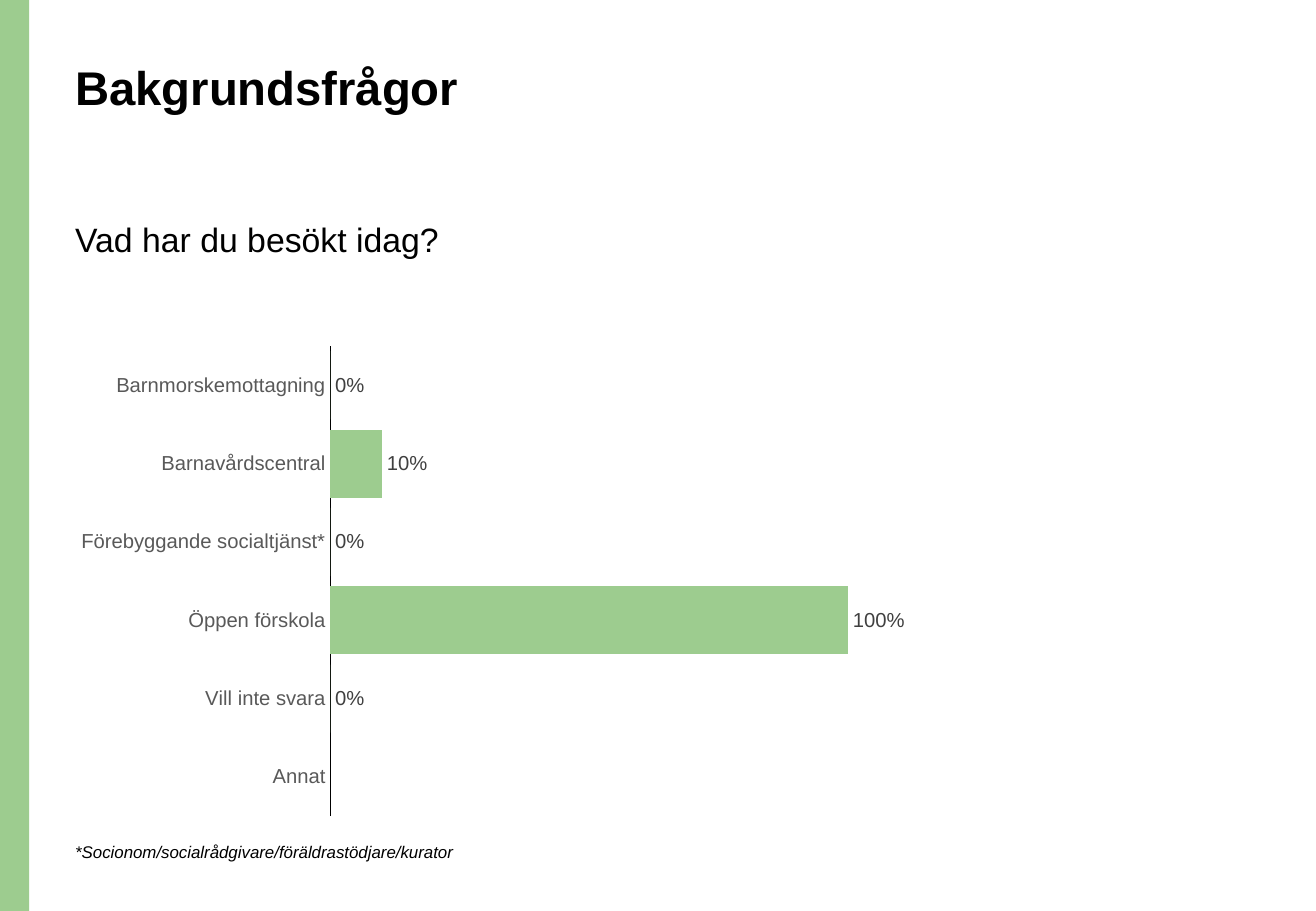
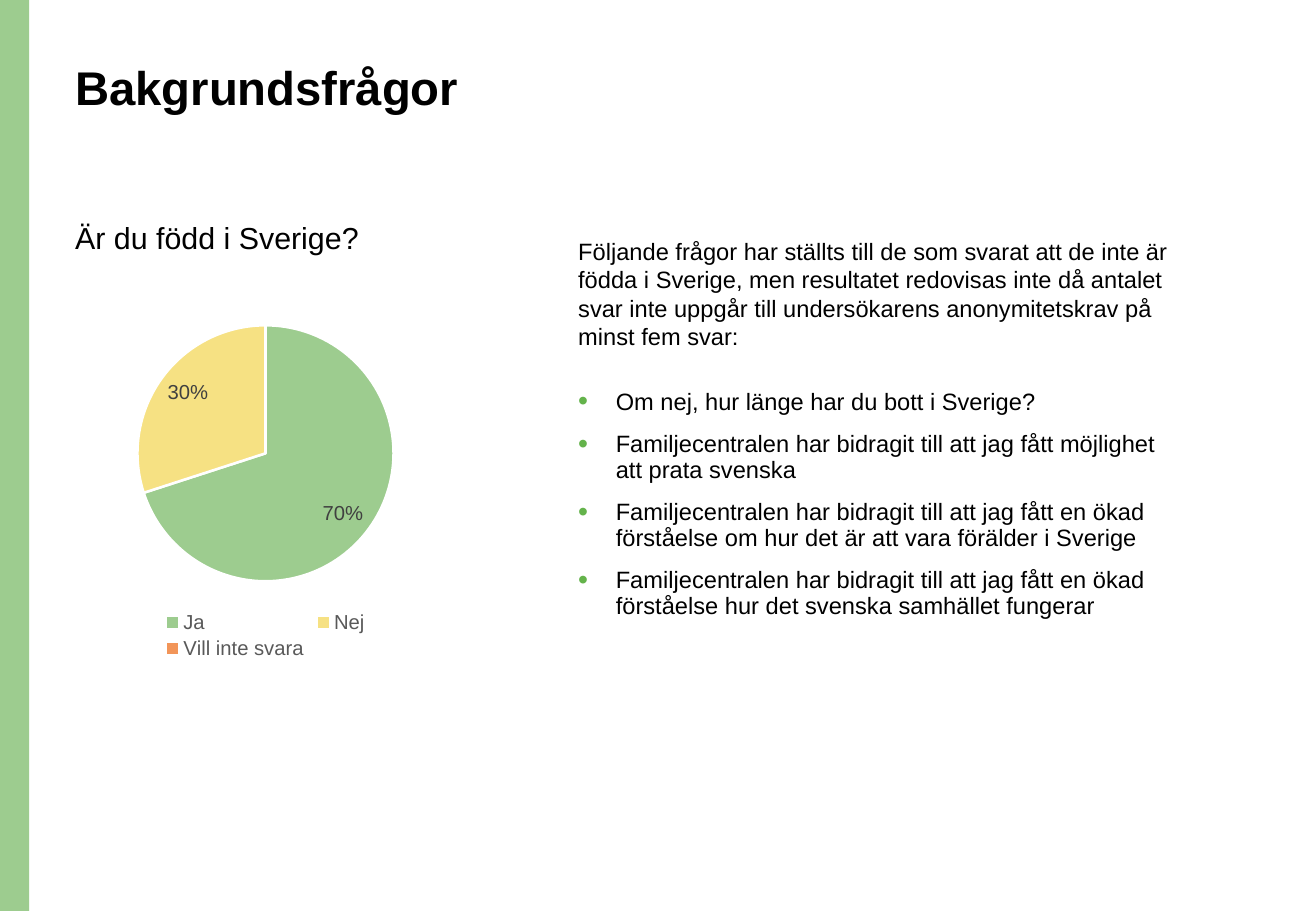
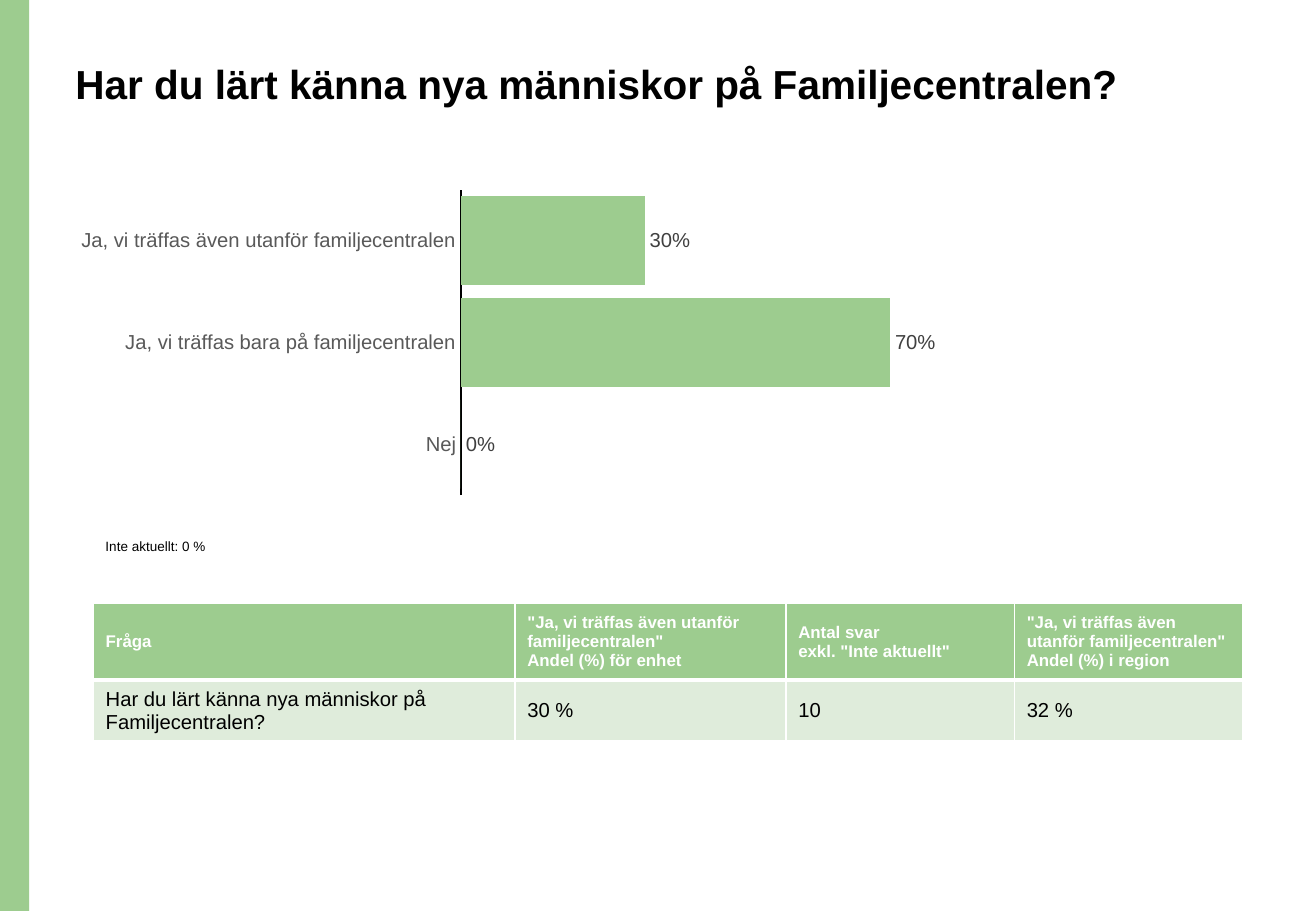
from lxml.etree import SubElement
from pptx import Presentation
from pptx.chart.data import CategoryChartData
from pptx.dml.color import RGBColor
from pptx.enum.chart import XL_CHART_TYPE, XL_LABEL_POSITION, XL_LEGEND_POSITION, XL_TICK_MARK
from pptx.enum.shapes import MSO_SHAPE
from pptx.enum.text import MSO_ANCHOR, PP_ALIGN
from pptx.oxml.ns import qn
from pptx.util import Inches, Pt

WIDTH, HEIGHT = 10.83, 7.5
LEFT = 0.52
FONT = "Arial"
BLACK, WHITE = "000000", "FFFFFF"
GREEN, PALE_GREEN, BULLET_GREEN = "9DCC8F", "DFECDB", "64B34B"
YELLOW, ORANGE = "F6E183", "F29559"
AXIS_GREY, LABEL_GREY = "595959", "404040"

VISITS = [
    ("Barnmorskemottagning", 0),
    ("Barnavårdscentral", 0.1),
    ("Förebyggande socialtjänst*", 0),
    ("Öppen förskola", 1),
    ("Vill inte svara", 0),
    ("Annat", None),
]
BORN_IN_SWEDEN = [("Ja", 0.7), ("Nej", 0.3), ("Vill inte svara", 0)]
NEW_PEOPLE = [
    ("Ja, vi träffas även utanför familjecentralen", 0.3),
    ("Ja, vi träffas bara på familjecentralen", 0.7),
    ("Nej", 0),
]
INTRODUCTION = (
    "Följande frågor har ställts till de som svarat att de inte är födda i Sverige, "
    "men resultatet redovisas inte då antalet svar inte uppgår till undersökarens "
    "anonymitetskrav på minst fem svar:"
)
FOLLOW_UPS = [
    "Om nej, hur länge har du bott i Sverige?",
    "Familjecentralen har bidragit till att jag fått möjlighet att prata svenska",
    "Familjecentralen har bidragit till att jag fått en ökad förståelse om hur det är att vara förälder i Sverige",
    "Familjecentralen har bidragit till att jag fått en ökad förståelse hur det svenska samhället fungerar",
]
TABLE_ROWS = [
    [
        "Fråga",
        '"Ja, vi träffas även utanför familjecentralen"\nAndel (%) för enhet',
        'Antal svar\nexkl. "Inte aktuellt"',
        '"Ja, vi träffas även utanför familjecentralen"\nAndel (%) i region',
    ],
    ["Har du lärt känna nya människor på Familjecentralen?", "30 %", "10", "32 %"],
]
COLUMN_WIDTHS = [3.47, 2.23, 1.88, 1.88]
ROW_HEIGHTS = [0.63, 0.23]


def color(value):
    return RGBColor.from_string(value)


def box(left, top, width, height):
    return [Inches(length) for length in (left, top, width, height)]


def style_font(font, size, value=BLACK, bold=False, italic=False):
    font.name = FONT
    font.size = Pt(size)
    font.bold = bold
    font.italic = italic
    font.color.rgb = color(value)


def add_band(layout, slide):
    band = slide.shapes.add_shape(MSO_SHAPE.RECTANGLE, *box(0, 0, 0.24, HEIGHT))
    band.shadow.inherit = False
    band.fill.solid()
    band.fill.fore_color.rgb = color(GREEN)
    band.line.fill.background()
    layout.shapes.element.insert(2, band.element) if hasattr(layout.shapes, "element") else \
        layout.element.cSld.spTree.insert(2, band.element)


def add_titled_slide(presentation, text, size):
    slide = presentation.slides.add_slide(presentation.slide_layouts[5])
    title = slide.shapes.title
    title.left, title.top, title.width, title.height = box(LEFT, 0.48, 9.34, 1.02)
    frame = title.text_frame
    frame.text = text
    frame.word_wrap = True
    frame.vertical_anchor = MSO_ANCHOR.TOP
    paragraph = frame.paragraphs[0]
    paragraph.alignment = PP_ALIGN.LEFT
    paragraph.line_spacing = 0.9
    style_font(paragraph.runs[0].font, size, bold=True)
    return slide


def add_text(slide, place, lines, size, spacing=1.0, italic=False, bulleted=False):
    frame = slide.shapes.add_textbox(*box(*place)).text_frame
    frame.word_wrap = True
    frame.text = "\n".join(lines)
    for index, paragraph in enumerate(frame.paragraphs):
        paragraph.line_spacing = spacing
        if index:
            paragraph.space_before = Pt(10)
        if bulleted:
            add_bullet(paragraph)
        style_font(paragraph.runs[0].font, size, italic=italic)


def add_bullet(paragraph):
    properties = paragraph._p.get_or_add_pPr()
    indent = Inches(0.31)
    properties.set("marL", str(indent))
    properties.set("indent", str(-indent))
    bullet_color = SubElement(properties, qn("a:buClr"))
    SubElement(bullet_color, qn("a:srgbClr"), val=BULLET_GREEN)
    SubElement(properties, qn("a:buSzPct"), val="120000")
    SubElement(properties, qn("a:buFont"), typeface=FONT)
    SubElement(properties, qn("a:buChar"), char="•")


def add_chart(slide, kind, place, answers, label_position, number_format):
    data = CategoryChartData()
    data.categories = [name for name, share in answers]
    data.add_series("Series 1", [share for name, share in answers])
    chart = slide.shapes.add_chart(kind, *box(*place), data).chart
    style_font(chart.font, 10)
    chart.has_title = False
    chart.has_legend = False
    plot = chart.plots[0]
    plot.vary_by_categories = False
    plot.has_data_labels = True
    labels = plot.data_labels
    labels.show_value = True
    labels.show_percentage = False
    labels.position = label_position
    labels.number_format = number_format
    labels.number_format_is_linked = False
    style_font(labels.font, 12, LABEL_GREY)
    return chart


def add_bar_chart(slide, place, answers):
    chart = add_chart(slide, XL_CHART_TYPE.BAR_CLUSTERED, place, answers,
                      XL_LABEL_POSITION.OUTSIDE_END, "0%")
    plot = chart.plots[0]
    plot.gap_width = 15
    fill = plot.series[0].format.fill
    fill.solid()
    fill.fore_color.rgb = color(GREEN)
    axis = chart.category_axis
    axis.reverse_order = True
    axis.major_tick_mark = XL_TICK_MARK.NONE
    axis.format.line.color.rgb = color(BLACK)
    axis.format.line.width = Pt(0.75)
    style_font(axis.tick_labels.font, 12, AXIS_GREY)
    chart.value_axis.has_major_gridlines = False
    chart.value_axis.visible = False


def add_pie_chart(slide, place, answers, slice_colors):
    chart = add_chart(slide, XL_CHART_TYPE.PIE, place, answers,
                      XL_LABEL_POSITION.INSIDE_END, '[<0.01]"";[>0.01]0%')
    chart.plots[0].vary_by_categories = True
    for index, value in enumerate(slice_colors):
        slice_format = chart.plots[0].series[0].points[index].format
        slice_format.fill.solid()
        slice_format.fill.fore_color.rgb = color(value)
        slice_format.line.color.rgb = color(WHITE)
        slice_format.line.width = Pt(1.5)
    chart.has_legend = True
    chart.legend.position = XL_LEGEND_POSITION.BOTTOM
    chart.legend.include_in_layout = False
    style_font(chart.legend.font, 12, AXIS_GREY)


def add_borders(cell, bottom):
    properties = cell._tc.get_or_add_tcPr()
    for side, width in (("L", 1), ("R", 1), ("T", 1), ("B", bottom)):
        line = SubElement(properties, qn(f"a:ln{side}"), w=str(Pt(width)))
        fill = SubElement(line, qn("a:solidFill"))
        SubElement(fill, qn("a:srgbClr"), val=WHITE)


def add_result_table(slide, left, top):
    place = box(left, top, sum(COLUMN_WIDTHS), sum(ROW_HEIGHTS))
    table = slide.shapes.add_table(len(ROW_HEIGHTS), len(COLUMN_WIDTHS), *place).table
    for column, width in zip(table.columns, COLUMN_WIDTHS):
        column.width = Inches(width)
    for row_index, (row, height) in enumerate(zip(table.rows, ROW_HEIGHTS)):
        row.height = Inches(height)
        header = row_index == 0
        for cell, text in zip(row.cells, TABLE_ROWS[row_index]):
            cell.text_frame.text = text
            cell.vertical_anchor = MSO_ANCHOR.MIDDLE
            add_borders(cell, 3 if header else 1)
            cell.fill.solid()
            cell.fill.fore_color.rgb = color(GREEN if header else PALE_GREEN)
            for paragraph in cell.text_frame.paragraphs:
                style_font(paragraph.runs[0].font, 10 if header else 12,
                           WHITE if header else BLACK, bold=header)


def main():
    presentation = Presentation()
    presentation.slide_width, presentation.slide_height = Inches(WIDTH), Inches(HEIGHT)

    slide = add_titled_slide(presentation, "Bakgrundsfrågor", 28)
    add_band(slide.slide_layout, slide)
    add_text(slide, (LEFT, 1.79, 6.5, 0.74), ["Vad har du besökt idag?"], 20, 0.9)
    add_bar_chart(slide, (LEFT, 2.77, 7.46, 4.03), VISITS)
    add_text(slide, (LEFT, 6.88, 5.42, 0.27),
             ["*Socionom/socialrådgivare/föräldrastödjare/kurator"], 10, italic=True)

    slide = add_titled_slide(presentation, "Bakgrundsfrågor", 28)
    add_text(slide, (LEFT, 1.79, 4.58, 0.46), ["Är du född i Sverige?"], 18, 0.9)
    add_pie_chart(slide, (LEFT, 2.54, 3.33, 2.93), BORN_IN_SWEDEN, [GREEN, YELLOW, ORANGE])
    add_text(slide, (4.66, 1.9, 5.21, 1.04), [INTRODUCTION], 14)
    add_text(slide, (4.66, 3.16, 5.03, 2.07), FOLLOW_UPS, 14, 0.9, bulleted=True)

    slide = add_titled_slide(presentation, "Har du lärt känna nya människor på Familjecentralen?", 24)
    add_bar_chart(slide, (LEFT, 1.51, 7.46, 2.62), NEW_PEOPLE)
    add_text(slide, (0.77, 4.31, 2.1, 0.28), ["Inte aktuellt: 0 %"], 8, 1.5)
    add_result_table(slide, 0.77, 4.97)

    presentation.save("out.pptx")


if __name__ == "__main__":
    main()
